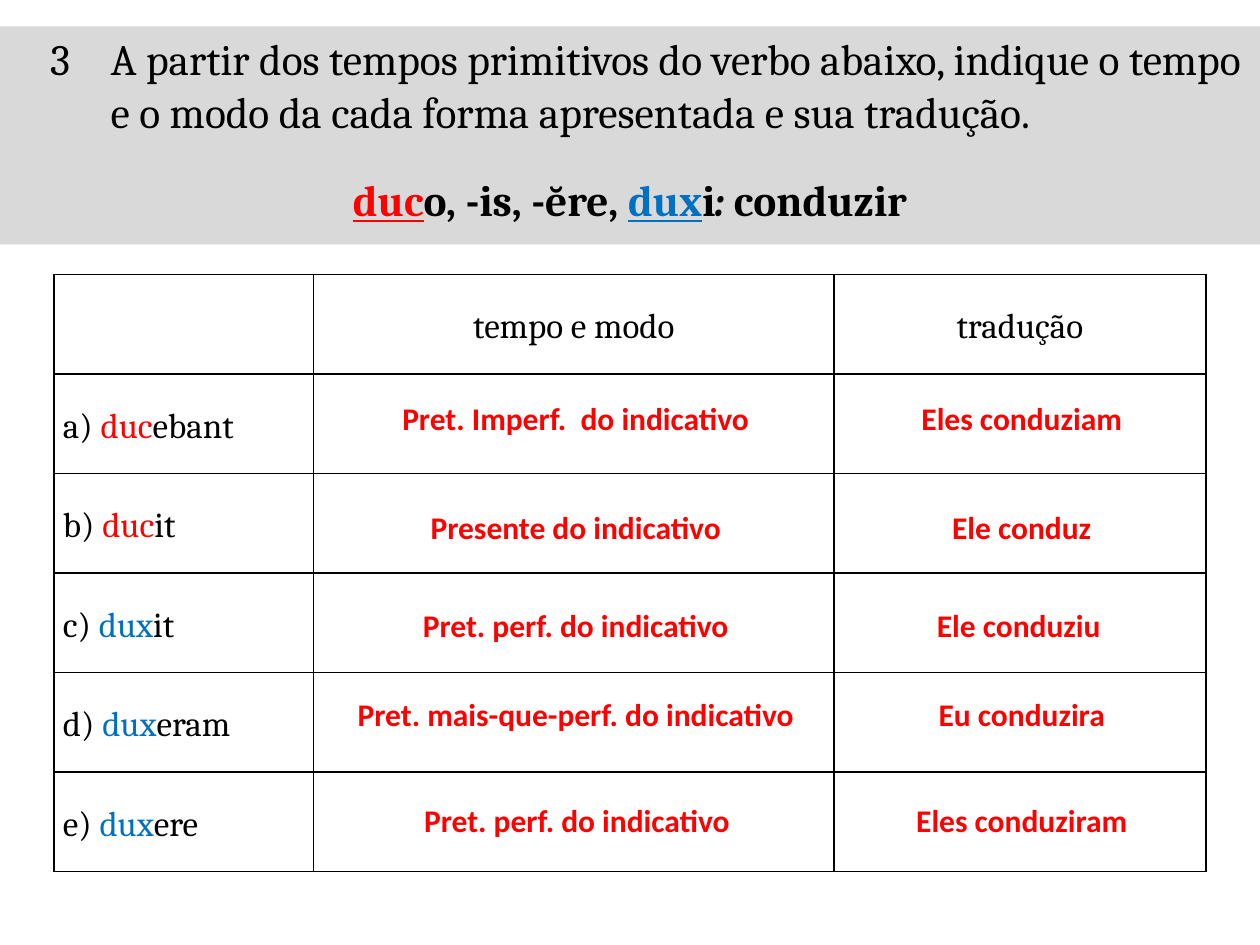
from lxml import etree
from pptx import Presentation
from pptx.dml.color import RGBColor
from pptx.enum.shapes import MSO_SHAPE
from pptx.enum.text import MSO_ANCHOR, PP_ALIGN
from pptx.oxml.ns import qn
from pptx.util import Inches, Pt

RECTANGLE = MSO_SHAPE.RECTANGLE
TOP, MIDDLE = MSO_ANCHOR.TOP, MSO_ANCHOR.MIDDLE
LEFT, CENTER = PP_ALIGN.LEFT, PP_ALIGN.CENTER

COLORS = {"black": "000000", "red": "FF0000", "blue": "0070C0", "band": "D9D9D9"}
SERIF, SANS = "Cambria", "Calibri"
TITLE_SIZE = 24.8

QUESTION = ("A partir dos tempos primitivos do verbo abaixo, indique o tempo "
            "e o modo da cada forma apresentada e sua tradução.")
HEADINGS = ["", "tempo e modo", "tradução"]
VERB_FORMS = [
    ("a) ", "duc", "ebant", "red"),
    ("b) ", "duc", "it", "red"),
    ("c) ", "dux", "it", "blue"),
    ("d) ", "dux", "eram", "blue"),
    ("e) ", "dux", "ere", "blue"),
]
COLUMN_WIDTHS = [2.06, 4.13, 2.95]
ROW_HEIGHT = 0.79
TENSE_WIDTH, TRANSLATION_CENTER = 3.7, 8.11
ANSWERS = [
    (3.12, "Pret. Imperf.  do indicativo", 2.72, "Eles conduziam", 6.81, 2.6),
    (3.98, "Presente do indicativo", 2.72, "Ele conduz", 6.81, 2.6),
    (4.76, "Pret. perf. do indicativo", 2.72, "Ele conduziu", 6.64, 2.89),
    (5.47, "Pret. mais-que-perf. do indicativo", 2.72, "Eu conduzira", 6.81, 2.6),
    (6.31, "Pret. perf. do indicativo", 2.73, "Eles conduziram", 6.81, 2.6),
]


def add_text(paragraph, text, size=20, font=SERIF, color="black",
             bold=False, italic=False, underline=False):
    run = paragraph.add_run()
    run.text = text
    run.font.size = Pt(size)
    run.font.name = font
    run.font.bold = bold
    run.font.italic = italic
    run.font.underline = underline
    run.font.color.rgb = RGBColor.from_string(COLORS[color])


def set_indent(paragraph, left, first_line):
    properties = paragraph._p.get_or_add_pPr()
    properties.set("marL", str(Inches(left)))
    properties.set("indent", str(Inches(first_line)))
    return properties


def add_question(slide):
    band = slide.shapes.add_shape(
        RECTANGLE, Inches(0), Inches(0.21), Inches(10), Inches(1.73))
    band.shadow.inherit = False
    band.fill.solid()
    band.fill.fore_color.rgb = RGBColor.from_string(COLORS["band"])
    band.line.fill.background()
    frame = band.text_frame
    frame.word_wrap = True
    frame.vertical_anchor = TOP

    question = frame.paragraphs[0]
    question.alignment = LEFT
    properties = set_indent(question, 0.78, -0.48)
    etree.SubElement(properties, qn("a:buFont"), typeface="+mj-lt")
    etree.SubElement(properties, qn("a:buAutoNum"), type="arabicPlain", startAt="3")
    add_text(question, QUESTION, size=TITLE_SIZE)

    verb = frame.add_paragraph()
    verb.alignment = CENTER
    verb.space_before = Pt(21)
    set_indent(verb, 0.56, -0.56)
    for text, style in [
        ("duc", {"color": "red", "underline": True}),
        ("o, -is, -ĕre, ", {}),
        ("dux", {"color": "blue", "underline": True}),
        ("i", {}),
        (": ", {"italic": True}),
        ("conduzir", {}),
    ]:
        add_text(verb, text, size=TITLE_SIZE, bold=True, **style)


def format_cell(cell):
    cell.vertical_anchor = MIDDLE
    cell.margin_left = cell.margin_right = Inches(0.07)
    cell.margin_top = cell.margin_bottom = 0
    properties = cell._tc.get_or_add_tcPr()
    for side in ("a:lnL", "a:lnR", "a:lnT", "a:lnB"):
        border = etree.SubElement(properties, qn(side), w=str(Pt(1)))
        fill = etree.SubElement(border, qn("a:solidFill"))
        etree.SubElement(fill, qn("a:srgbClr"), val=COLORS["black"])
    cell.fill.background()
    cell.text_frame.paragraphs[0].line_spacing = 1.15


def add_verb_table(slide):
    row_count = len(VERB_FORMS) + 1
    table = slide.shapes.add_table(
        row_count, len(COLUMN_WIDTHS), Inches(0.43), Inches(2.18),
        Inches(sum(COLUMN_WIDTHS)), Inches(ROW_HEIGHT * row_count)).table
    table.first_row = table.horz_banding = False
    for column, width in zip(table.columns, COLUMN_WIDTHS):
        column.width = Inches(width)
    for row in table.rows:
        row.height = Inches(ROW_HEIGHT)
    for cell in table.iter_cells():
        format_cell(cell)

    for index, heading in enumerate(HEADINGS):
        if heading:
            paragraph = table.cell(0, index).text_frame.paragraphs[0]
            paragraph.alignment = CENTER
            add_text(paragraph, heading)
    for index, (label, stem, ending, color) in enumerate(VERB_FORMS, start=1):
        paragraph = table.cell(index, 0).text_frame.paragraphs[0]
        add_text(paragraph, label)
        add_text(paragraph, stem, color=color)
        add_text(paragraph, ending)


def add_answer(slide, text, left, top, width):
    box = slide.shapes.add_textbox(
        Inches(left), Inches(top), Inches(width), Inches(0.4))
    box.text_frame.word_wrap = True
    paragraph = box.text_frame.paragraphs[0]
    paragraph.alignment = CENTER
    add_text(paragraph, text, size=18, font=SANS, color="red", bold=True)


def main():
    presentation = Presentation()
    presentation.slide_width = Inches(10)
    presentation.slide_height = Inches(7.5)
    slide = presentation.slides.add_slide(presentation.slide_layouts[6])
    add_verb_table(slide)
    add_question(slide)
    for top, tense, tense_left, translation, left, width in ANSWERS:
        add_answer(slide, tense, tense_left, top, TENSE_WIDTH)
        add_answer(slide, translation, left, top, width)
    presentation.save("out.pptx")


if __name__ == "__main__":
    main()
